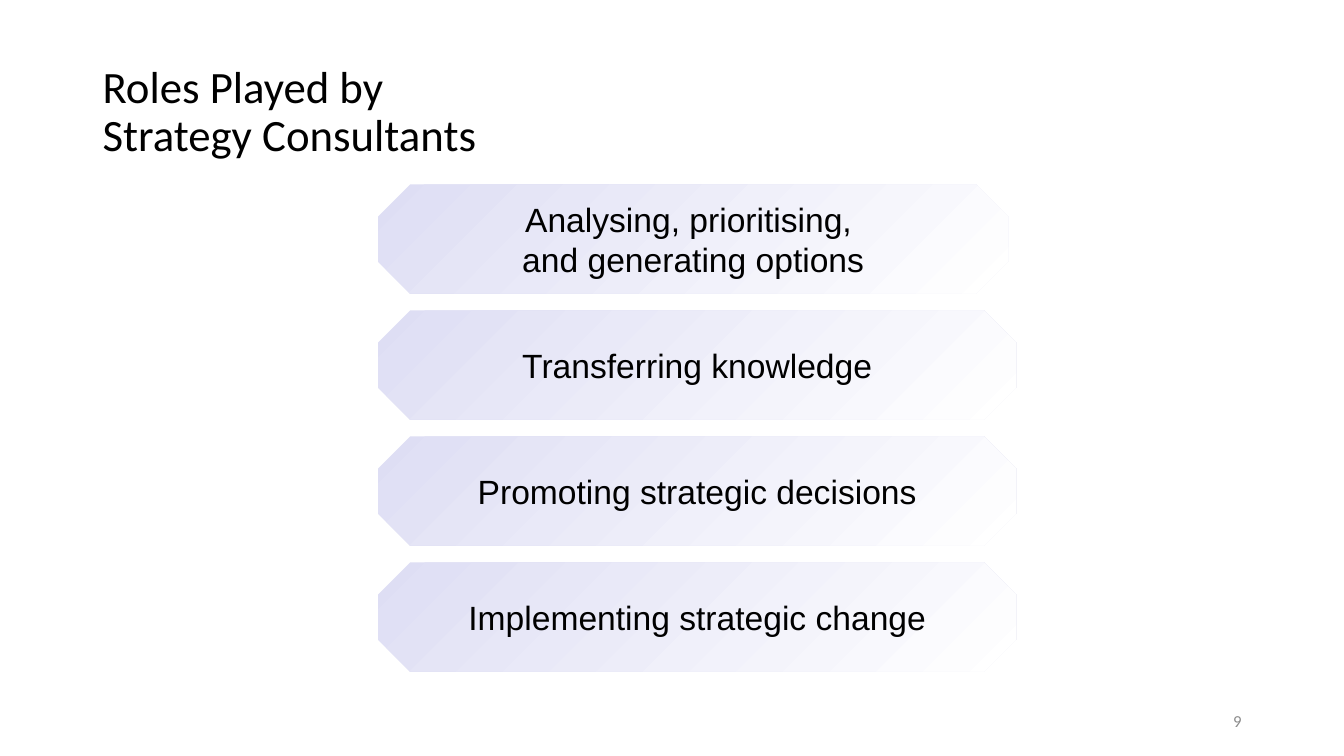
import dataclasses

import pptx
import pptx.dml.color
import pptx.enum.shapes
import pptx.enum.text
import pptx.util

Cm = pptx.util.Cm
Align = pptx.enum.text.PP_ALIGN


@dataclasses.dataclass(frozen=True)
class Theme:
    text: str = "000000"
    muted: str = "8C8C8C"
    band_start: str = "DEDEF4"
    band_end: str = "FFFFFF"
    heading_font: str = "Calibri"
    body_font: str = "Arial"
    title_size: int = 32
    role_size: int = 24
    number_size: int = 12


THEME = Theme()

# Each role with the width of its band in centimetres
ROLES = [
    ("Analysing, prioritising, \nand generating options", 15.88),
    ("Transferring knowledge", 16.08),
    ("Promoting strategic decisions", 16.08),
    ("Implementing strategic change", 16.08),
]
BAND_LEFT, BAND_TOP, BAND_HEIGHT, BAND_PITCH = 9.53, 4.65, 2.75, 3.175


def rgb(value):
    return pptx.dml.color.RGBColor.from_string(value)


def write_text(shape, text, font_name, size, color, alignment, wrap=True):
    frame = shape.text_frame
    frame.text = text
    frame.word_wrap = wrap
    frame.auto_size = pptx.enum.text.MSO_AUTO_SIZE.NONE
    frame.vertical_anchor = pptx.enum.text.MSO_ANCHOR.MIDDLE
    for paragraph in frame.paragraphs:
        paragraph.alignment = alignment
        paragraph.font.name = font_name
        paragraph.font.size = pptx.util.Pt(size)
        paragraph.font.color.rgb = rgb(color)


def add_title(slide, text):
    title = slide.shapes.title
    title.left, title.top = Cm(2.33), Cm(1.01)
    title.width, title.height = Cm(29.21), Cm(3.68)
    write_text(title, text, THEME.heading_font, THEME.title_size, THEME.text, Align.LEFT)
    title.text_frame.paragraphs[0].line_spacing = 0.9


def add_role(slide, text, top, width):
    band = slide.shapes.add_shape(
        pptx.enum.shapes.MSO_SHAPE.OCTAGON,
        Cm(BAND_LEFT), Cm(top), Cm(width), Cm(BAND_HEIGHT))
    band.adjustments[0] = 0.293
    band.shadow.inherit = False
    band.line.fill.background()
    # Angles run counter-clockwise: 315 fades towards the lower right
    band.fill.gradient()
    band.fill.gradient_angle = 315
    for stop, color in zip(band.fill.gradient_stops, (THEME.band_start, THEME.band_end)):
        stop.color.rgb = rgb(color)
    write_text(band, text, THEME.body_font, THEME.role_size, THEME.text,
               Align.CENTER, wrap=False)


def add_slide_number(slide, number):
    box = slide.shapes.add_textbox(Cm(23.92), Cm(17.65), Cm(7.62), Cm(1.01))
    write_text(box, number, THEME.heading_font, THEME.number_size, THEME.muted, Align.RIGHT)


def main():
    presentation = pptx.Presentation()
    presentation.slide_width, presentation.slide_height = Cm(33.87), Cm(19.05)
    title_only = presentation.slide_layouts.get_by_name("Title Only")
    slide = presentation.slides.add_slide(title_only)

    # Heading, with a line break inside one paragraph
    add_title(slide, "Roles Played by \vStrategy Consultants")

    # Stack of role bands
    for index, (text, width) in enumerate(ROLES):
        add_role(slide, text, BAND_TOP + index * BAND_PITCH, width)

    add_slide_number(slide, "9")
    presentation.save("out.pptx")


if __name__ == "__main__":
    main()
